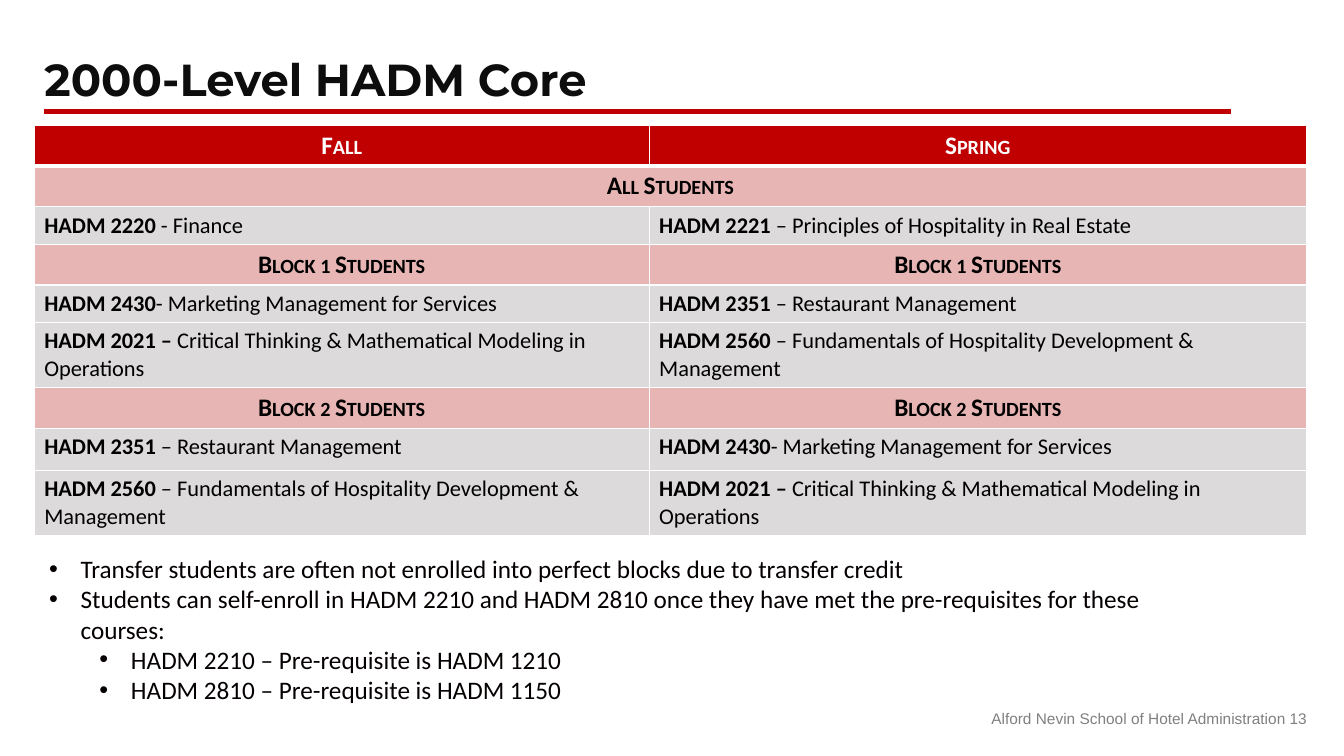
from lxml.etree import SubElement
from pptx import Presentation
from pptx.dml.color import RGBColor
from pptx.enum.shapes import MSO_CONNECTOR
from pptx.enum.text import MSO_ANCHOR, PP_ALIGN
from pptx.oxml.ns import qn
from pptx.util import Pt

RED = RGBColor(0xC0, 0x00, 0x00)
PINK = RGBColor(0xE8, 0xB5, 0xB5)
GRAY = RGBColor(0xDC, 0xDA, 0xDA)
WHITE = RGBColor(0xFF, 0xFF, 0xFF)
BLACK = RGBColor(0x00, 0x00, 0x00)
TITLE_COLOR = RGBColor(0x0D, 0x0D, 0x0D)
NOTE_COLOR = RGBColor(0x05, 0x00, 0x00)
FOOTER_COLOR = RGBColor(0x80, 0x80, 0x80)

TITLE_FONT = {"name": "Montserrat", "size": Pt(32), "bold": True}
BAND_FONT = {"name": "Calibri", "size": Pt(18), "bold": True}
CODE_FONT = {"name": "Calibri", "size": Pt(16), "bold": True}
COURSE_FONT = {"name": "Calibri", "size": Pt(16), "bold": False}
NOTE_FONT = {"name": "Calibri", "size": Pt(18)}
FOOTER_FONT = {"name": "Arial", "size": Pt(11)}

FINANCE = ("HADM 2220", " - Finance")
REAL_ESTATE = ("HADM 2221", " – Principles of Hospitality in Real Estate")
MARKETING = ("HADM 2430", "- Marketing Management for Services")
RESTAURANT = ("HADM 2351", " – Restaurant Management")
MODELING = ("HADM 2021 – ", "Critical Thinking & Mathematical Modeling in Operations")
DEVELOPMENT = ("HADM 2560", " – Fundamentals of Hospitality Development & Management")

COLUMN_WIDTHS = (439.2, 469.6)
ROWS = (
    (28.8, ("Fall", "Spring")),
    (28.8, ("All Students",)),
    (26.6, (FINANCE, REAL_ESTATE)),
    (28.8, ("Block 1 Students",) * 2),
    (26.6, (MARKETING, RESTAURANT)),
    (46, (MODELING, DEVELOPMENT)),
    (28.8, ("Block 2 Students",) * 2),
    (30.2, (RESTAURANT, MARKETING)),
    (46, (DEVELOPMENT, MODELING)),
)
NOTES = (
    (0, "Transfer students are often not enrolled into perfect blocks due to transfer credit"),
    (0, "Students can self-enroll in HADM 2210 and HADM 2810 once they have met "
        "the pre-requisites for these courses:"),
    (1, "HADM 2210 – Pre-requisite is HADM 1210"),
    (1, "HADM 2810 – Pre-requisite is HADM 1150"),
)


def add_run(paragraph, text, font_format, color):
    """Add formatted text to a paragraph and return the run."""
    run = paragraph.add_run()
    run.text = text
    for name, value in font_format.items():
        setattr(run.font, name, value)
    run.font.color.rgb = color
    return run


def add_title(slide, text, left, top, width, height):
    """Place the title with the red rule along its bottom edge."""
    title = slide.shapes.title
    box = {"left": left, "top": top, "width": width, "height": height}
    for name, value in box.items():
        setattr(title, name, Pt(value))
    title.text_frame.vertical_anchor = MSO_ANCHOR.TOP
    paragraph = title.text_frame.paragraphs[0]
    paragraph.alignment = PP_ALIGN.LEFT
    add_run(paragraph, text, TITLE_FONT, TITLE_COLOR)
    bottom = Pt(top + height + 0.4)
    rule = slide.shapes.add_connector(
        MSO_CONNECTOR.STRAIGHT, Pt(left + 7.2), bottom, Pt(left + 854.6), bottom)
    rule.line.color.rgb = RED
    rule.line.width = Pt(3.5)
    SubElement(rule._element.spPr, qn("a:effectLst"))


def set_borders(cell, widths):
    """Draw white cell borders with a width in points for each side."""
    properties = cell._tc.get_or_add_tcPr()
    for index, (side, width) in enumerate(widths.items()):
        line = properties.makeelement(qn(f"a:{side}"), {"w": str(Pt(width))})
        fill = SubElement(line, qn("a:solidFill"))
        SubElement(fill, qn("a:srgbClr"), val=str(WHITE))
        properties.insert(index, line)


def fill_cell(cell, content, row_index):
    """Write a band heading or a course into a table cell."""
    paragraph = cell.text_frame.paragraphs[0]
    cell.fill.solid()
    if isinstance(content, str):
        is_header = row_index == 0
        cell.fill.fore_color.rgb = RED if is_header else PINK
        paragraph.alignment = PP_ALIGN.CENTER
        run = add_run(paragraph, content, BAND_FONT, WHITE if is_header else BLACK)
        run.font._element.set("cap", "small")
    else:
        cell.fill.fore_color.rgb = GRAY
        for text, font_format in zip(content, (CODE_FONT, COURSE_FONT)):
            add_run(paragraph, text, font_format, BLACK)


def add_course_table(slide, left, top):
    """Add the fall and spring course table."""
    heights = [height for height, _ in ROWS]
    table = slide.shapes.add_table(
        len(ROWS), len(COLUMN_WIDTHS), Pt(left), Pt(top),
        Pt(sum(COLUMN_WIDTHS)), Pt(sum(heights))).table
    for column, width in zip(table.columns, COLUMN_WIDTHS):
        column.width = Pt(width)
    for row_index, (height, contents) in enumerate(ROWS):
        table.rows[row_index].height = Pt(height)
        if len(contents) == 1:
            table.cell(row_index, 0).merge(table.cell(row_index, 1))
        for column_index, content in enumerate(contents):
            fill_cell(table.cell(row_index, column_index), content, row_index)
        for cell in table.rows[row_index].cells:
            set_borders(cell, {"lnL": 1, "lnR": 1, "lnT": 3 if row_index == 1 else 1,
                               "lnB": 3 if row_index == 0 else 1})


def add_text_frame(slide, left, top, width, height):
    """Add a wrapping text box and return its text frame."""
    shape = slide.shapes.add_textbox(Pt(left), Pt(top), Pt(width), Pt(height))
    shape.text_frame.word_wrap = True
    return shape.text_frame


def add_notes_list(slide, left, top, width, height):
    """Add the two-level bulleted list on enrollment."""
    frame = add_text_frame(slide, left, top, width, height)
    for index, (level, text) in enumerate(NOTES):
        paragraph = frame.add_paragraph() if index else frame.paragraphs[0]
        paragraph.level = level
        add_run(paragraph, text, NOTE_FONT, NOTE_COLOR)
        properties = paragraph._p.get_or_add_pPr()
        properties.set("marL", str(Pt(22.5 + 36 * level)))
        properties.set("indent", str(-Pt(22.5)))
        SubElement(properties, qn("a:buFont"), typeface="Arial")
        SubElement(properties, qn("a:buChar"), char="•")


def add_footer(slide, text, left, top, width, height):
    """Add the right-aligned footer with the slide number."""
    paragraph = add_text_frame(slide, left, top, width, height).paragraphs[0]
    paragraph.alignment = PP_ALIGN.RIGHT
    add_run(paragraph, text, FOOTER_FONT, FOOTER_COLOR)


def main():
    """Build and save the presentation."""
    presentation = Presentation()
    presentation.slide_width = Pt(960)
    presentation.slide_height = Pt(540)
    slide = presentation.slides.add_slide(presentation.slide_layouts.get_by_name("Title Only"))
    add_title(slide, "2000-Level HADM Core", 24.5, 33, 792, 46)
    add_course_table(slide, 24.5, 89.3)
    add_notes_list(slide, 28, 391.7, 854.6, 148)
    add_footer(slide, "Alford Nevin School of Hotel Administration 13", 327.6, 503.3, 613.4, 28.8)
    presentation.save("out.pptx")


if __name__ == "__main__":
    main()
